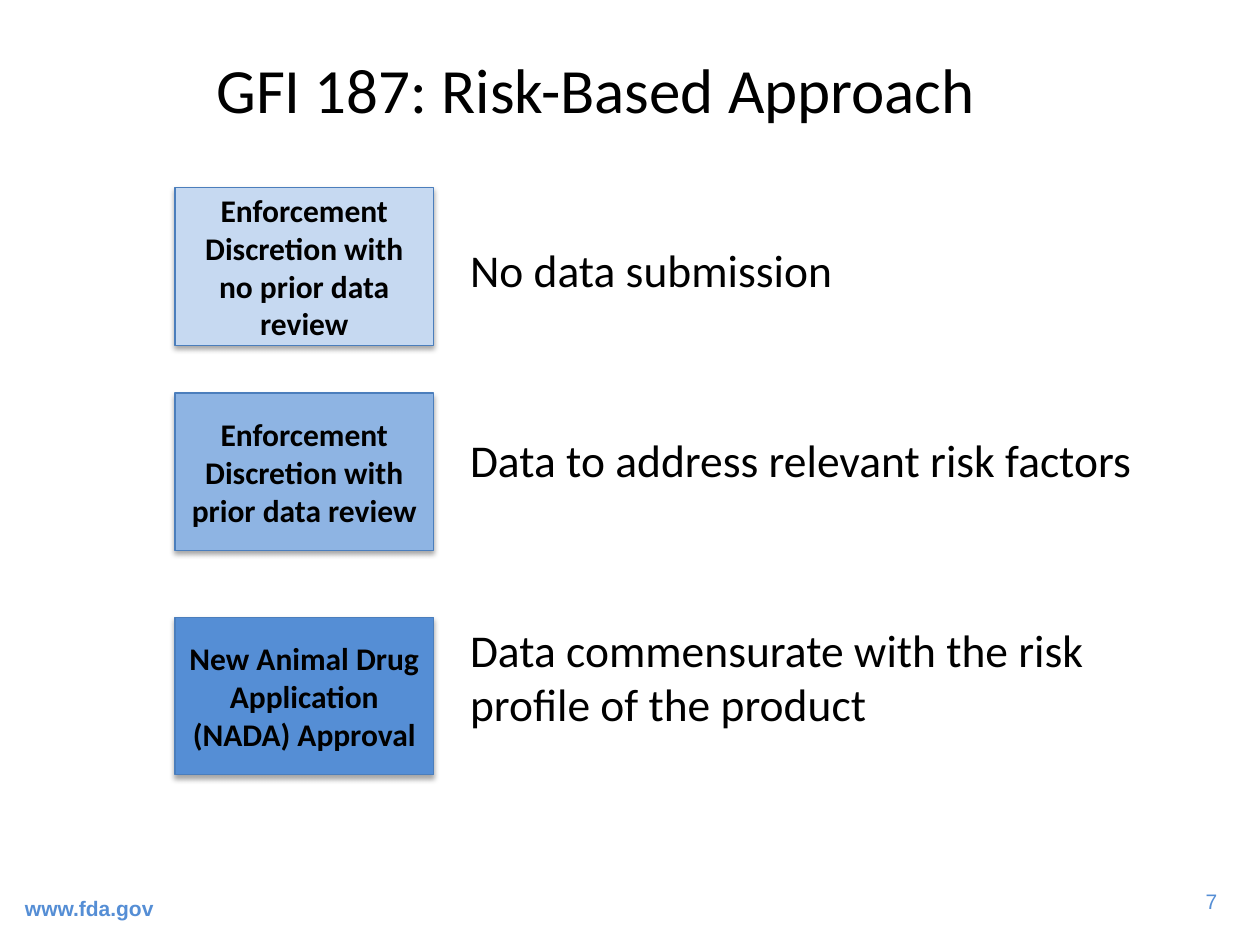
from dataclasses import dataclass

from lxml import etree
from pptx import Presentation
from pptx.dml.color import RGBColor
from pptx.enum.shapes import MSO_SHAPE
from pptx.enum.text import MSO_ANCHOR, PP_ALIGN
from pptx.oxml.ns import qn
from pptx.util import Pt

RECTANGLE = MSO_SHAPE.RECTANGLE
TOP, MIDDLE = MSO_ANCHOR.TOP, MSO_ANCHOR.MIDDLE
LEFT, CENTER, RIGHT = PP_ALIGN.LEFT, PP_ALIGN.CENTER, PP_ALIGN.RIGHT


@dataclass(frozen=True)
class Theme:
    text: str = "000000"
    accent: str = "558ED5"
    outline: str = "4B7EBC"
    low: str = "C6D9F1"
    medium: str = "8EB4E3"
    high: str = "558ED5"
    main_font: str = "Calibri"
    footer_font: str = "Arial"
    title_size: int = 36
    body_size: int = 26
    box_size: int = 18
    footer_size: int = 12


THEME = Theme()

# Category, fill, top of its box, data requirement
RISK_TIERS = [
    ("Enforcement Discretion with no prior data review", THEME.low, 107.3,
     "No data submission"),
    ("Enforcement Discretion with prior data review", THEME.medium, 224.6,
     "Data to address relevant risk factors"),
    ("New Animal Drug Application (NADA) Approval", THEME.high, 352.8,
     "Data commensurate with the risk profile of the product"),
]
REQUIREMENT_GAP = 77.4


def set_text(shape, lines, size, align=LEFT, anchor=MIDDLE, bold=False,
             font_name=THEME.main_font, color=THEME.text, gap=0):
    """Fill a shape with one paragraph per line, spaced by gap."""
    frame = shape.text_frame
    frame.word_wrap = True
    frame.vertical_anchor = anchor
    frame.text = "\n".join(lines)
    for index, paragraph in enumerate(frame.paragraphs):
        paragraph.alignment = align
        paragraph.space_before = Pt(gap if index else 0)
        for run in paragraph.runs:
            run.font.name = font_name
            run.font.size = Pt(size)
            run.font.bold = bold
            run.font.color.rgb = RGBColor.from_string(color)


def add_soft_shadow(shape):
    shape.shadow.inherit = False
    effects = shape._element.spPr.find(qn("a:effectLst"))
    shadow = etree.SubElement(
        effects, qn("a:outerShdw"), blurRad=str(Pt(3.1)), dist=str(Pt(1.8)),
        dir="5400000", rotWithShape="0")
    black = etree.SubElement(shadow, qn("a:srgbClr"), val="000000")
    etree.SubElement(black, qn("a:alpha"), val="35000")


def place_title(slide, left, top, width, height):
    title = slide.shapes.title
    title.left, title.top = Pt(left), Pt(top)
    title.width, title.height = Pt(width), Pt(height)
    set_text(title, ["GFI 187: Risk-Based Approach"], THEME.title_size, CENTER)


def add_tier_boxes(slide, left, width, height):
    for category, fill, top, _ in RISK_TIERS:
        box = slide.shapes.add_shape(RECTANGLE, Pt(left), Pt(top), Pt(width), Pt(height))
        box.fill.solid()
        box.fill.fore_color.rgb = RGBColor.from_string(fill)
        box.line.color.rgb = RGBColor.from_string(THEME.outline)
        box.line.width = Pt(0.75)
        add_soft_shadow(box)
        set_text(box, [category], THEME.box_size, CENTER, bold=True)


def add_requirements(slide, left, top, width, height):
    requirements = slide.shapes.add_textbox(Pt(left), Pt(top), Pt(width), Pt(height))
    set_text(requirements, [tier[-1] for tier in RISK_TIERS], THEME.body_size,
             anchor=TOP, gap=REQUIREMENT_GAP)


def add_footer(slide, left, top, width, height):
    """Place the web address at the left end and the page number at the right."""
    address_width, number_width = 93.6, 29.5
    address = slide.shapes.add_textbox(Pt(left), Pt(top), Pt(address_width), Pt(height))
    set_text(address, ["www.fda.gov"], THEME.footer_size, bold=True,
             font_name=THEME.footer_font, color=THEME.accent)
    number = slide.shapes.add_textbox(
        Pt(left + width - number_width), Pt(top), Pt(number_width), Pt(height))
    set_text(number, ["7"], THEME.footer_size, RIGHT, TOP,
             font_name=THEME.footer_font, color=THEME.accent)


def main():
    prs = Presentation()
    prs.slide_width, prs.slide_height = Pt(720), Pt(540)
    slide = prs.slides.add_slide(prs.slide_layouts.get_by_name("Title Only"))
    place_title(slide, 36, 21.6, 609, 57.6)
    add_requirements(slide, 261.5, 134.6, 422.5, 368)
    add_tier_boxes(slide, 100, 147.8, 90)
    add_footer(slide, 7.2, 504.4, 695.5, 28.8)
    prs.save("out.pptx")


if __name__ == "__main__":
    main()
